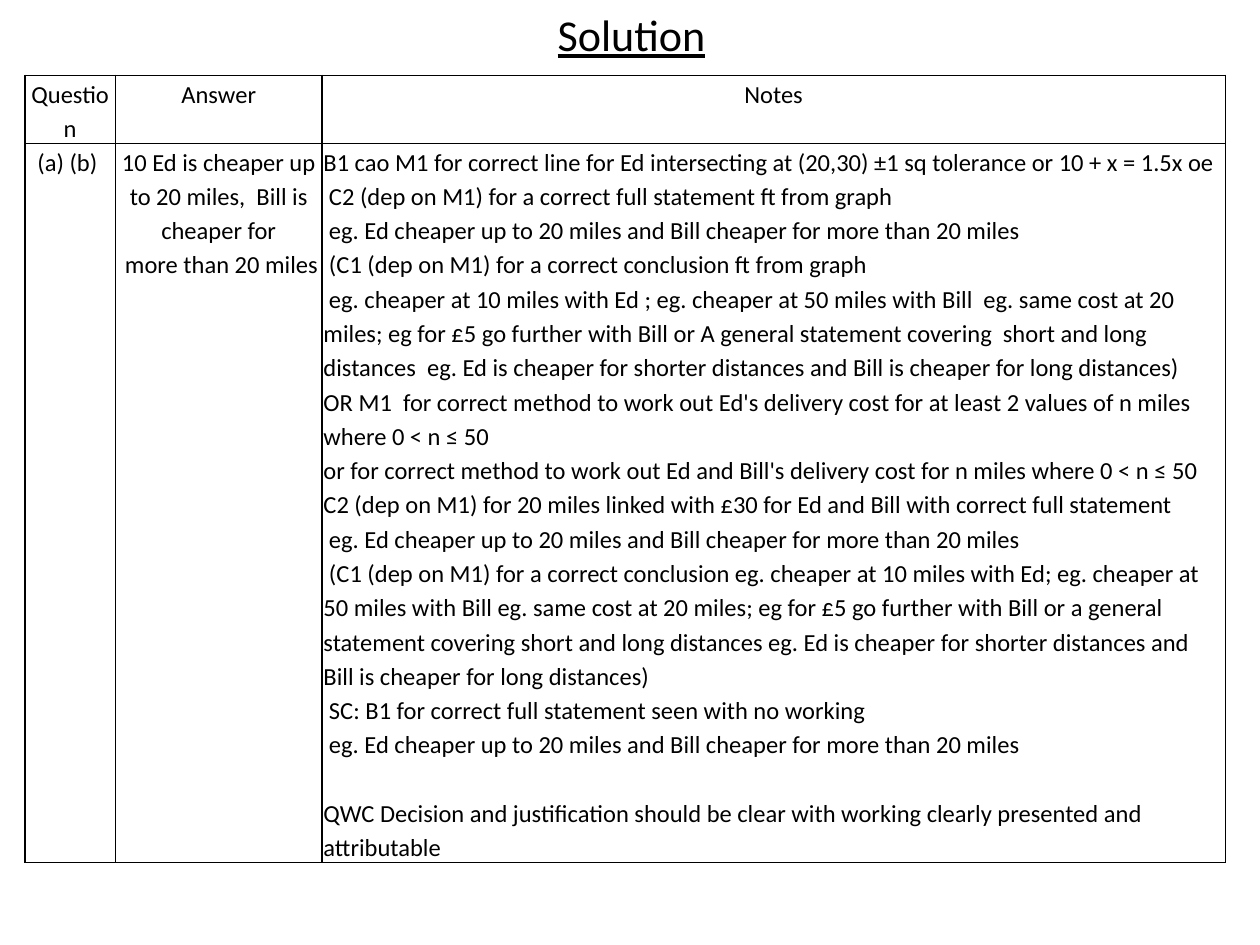
from lxml import etree
from pptx import Presentation
from pptx.dml.color import RGBColor
from pptx.enum import text as t
from pptx.oxml.ns import qn
from pptx.util import Cm, Pt

BLACK = RGBColor(0, 0, 0)
MID, LEFT = t.PP_ALIGN.CENTER, t.PP_ALIGN.LEFT
BODY = {"size": Pt(14), "name": "Calibri"}
HEAD = {"size": Pt(25.2), "name": "Calibri", "underline": True}


def write(frame, lines, form, align, gap=1.0):
    for i, line in enumerate(lines):
        par = frame.paragraphs[0] if i == 0 else frame.add_paragraph()
        par.alignment, par.line_spacing = align, gap
        run = par.add_run()
        run.text = line
        run.font.color.rgb = BLACK
        for key, val in form.items():
            setattr(run.font, key, val)


def frame_cell(cell):
    """Draw a thin black line on all four sides of the cell."""
    props = cell._tc.get_or_add_tcPr()
    for side in ("a:lnL", "a:lnR", "a:lnT", "a:lnB"):
        line = etree.SubElement(props, qn(side), w=str(Pt(1)))
        fill = etree.SubElement(line, qn("a:solidFill"))
        etree.SubElement(fill, qn("a:srgbClr"), val=str(BLACK))


ANSWER = ["10 Ed is cheaper up to 20 miles,  Bill is cheaper for",
          " more than 20 miles "]
NOTES = [
    "B1 cao M1 for correct line for Ed intersecting at (20,30) ±1 sq tolerance "
    "or 10 + x = 1.5x oe",
    " C2 (dep on M1) for a correct full statement ft from graph",
    " eg. Ed cheaper up to 20 miles and Bill cheaper for more than 20 miles",
    " (C1 (dep on M1) for a correct conclusion ft from graph",
    " eg. cheaper at 10 miles with Ed ; eg. cheaper at 50 miles with Bill  "
    "eg. same cost at 20 miles; eg for £5 go further with Bill or A general "
    "statement covering  short and long distances  eg. Ed is cheaper for "
    "shorter distances and Bill is cheaper for long distances)",
    "OR M1  for correct method to work out Ed's delivery cost for at least "
    "2 values of n miles where 0 < n ≤ 50",
    "or for correct method to work out Ed and Bill's delivery cost for n miles "
    "where 0 < n ≤ 50",
    "C2 (dep on M1) for 20 miles linked with £30 for Ed and Bill with correct "
    "full statement",
    " eg. Ed cheaper up to 20 miles and Bill cheaper for more than 20 miles",
    " (C1 (dep on M1) for a correct conclusion eg. cheaper at 10 miles with Ed; "
    "eg. cheaper at 50 miles with Bill eg. same cost at 20 miles; eg for £5 go "
    "further with Bill or a general statement covering short and long distances "
    "eg. Ed is cheaper for shorter distances and Bill is cheaper for long "
    "distances)",
    " SC: B1 for correct full statement seen with no working",
    " eg. Ed cheaper up to 20 miles and Bill cheaper for more than 20 miles",
    "QWC Decision and justification should be clear with working clearly "
    "presented and attributable",
]
ROWS = [[["Question"], ["Answer"], ["Notes"]],
        [["(a) (b) "], ANSWER, NOTES]]
WIDTHS = [1.83, 4.16, 18.21]
HEIGHTS = [1.37, 14.5]

deck = Presentation()
deck.slide_width, deck.slide_height = Cm(25.4), Cm(19.05)
slide = deck.slides.add_slide(deck.slide_layouts[6])

title = slide.shapes.add_textbox(Cm(1.3), Cm(0), Cm(22.86), Cm(1.37)).text_frame
title.word_wrap = True
title.vertical_anchor = t.MSO_ANCHOR.MIDDLE
write(title, ["Solution"], HEAD, MID)

table = slide.shapes.add_table(2, 3, Cm(0.5), Cm(1.52), Cm(sum(WIDTHS)),
                               Cm(sum(HEIGHTS))).table
table.first_row = table.horz_banding = False
for col, width in zip(table.columns, WIDTHS):
    col.width = Cm(width)
for r, (row, height) in enumerate(zip(ROWS, HEIGHTS)):
    table.rows[r].height = Cm(height)
    for c, lines in enumerate(row):
        cell = table.cell(r, c)
        cell.margin_left = cell.margin_right = Cm(0.03)
        cell.margin_top = cell.margin_bottom = Cm(0)
        frame_cell(cell)
        cell.fill.background()
        write(cell.text_frame, lines, BODY, LEFT if lines is NOTES else MID, 1.15)
table.cell(0, 0).vertical_anchor = t.MSO_ANCHOR.MIDDLE
table.cell(1, 2).text_frame.paragraphs[-1].space_before = Pt(19.6)

deck.save("out.pptx")
